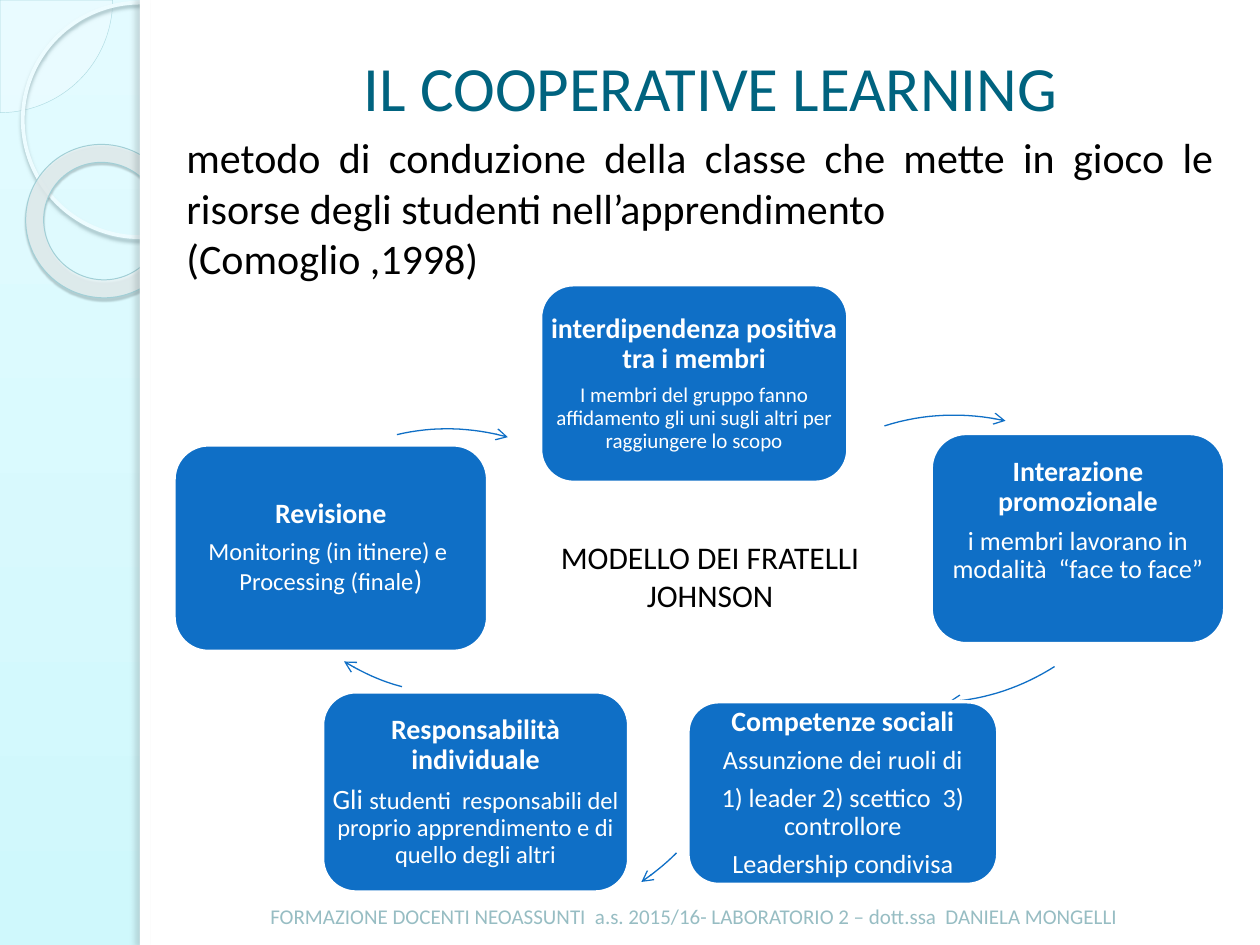
from lxml.etree import SubElement
from pptx import Presentation
from pptx.dml.color import RGBColor
from pptx.enum.shapes import MSO_SHAPE
from pptx.enum.text import MSO_ANCHOR, PP_ALIGN
from pptx.oxml.ns import qn
from pptx.util import Pt

WHITE = RGBColor(0xFF, 0xFF, 0xFF)
BLACK = RGBColor(0x00, 0x00, 0x00)
BLUE = RGBColor(0x0F, 0x6F, 0xC6)
TEAL = RGBColor(0x00, 0x63, 0x7F)
FOOTER_TEAL = RGBColor(0x97, 0xBD, 0xC3)
STRIP_TOP = RGBColor(0xE3, 0xFB, 0xFF)
STRIP_BOTTOM = RGBColor(0xCF, 0xF8, 0xFC)
PIE_FILL = RGBColor(0xF8, 0xFE, 0xFF)
PIE_LINE = RGBColor(0xAF, 0xDB, 0xE2)
CIRCLE_LINE = RGBColor(0xED, 0xFC, 0xFF)
DONUT_FILL = RGBColor(0xE8, 0xF1, 0xF2)
DONUT_LINE = RGBColor(0xA1, 0xCF, 0xD6)

presentation = Presentation()
presentation.slide_width, presentation.slide_height = Pt(720), Pt(540)
slide = presentation.slides.add_slide(presentation.slide_layouts[5])


def write_text(shape, paragraphs, color=BLACK, align=PP_ALIGN.CENTER,
               anchor=MSO_ANCHOR.MIDDLE, line_spacing=None, after=0, insets=None):
    """Each paragraph is a list of (text, size, bold) runs; after is a share of the size."""
    frame = shape.text_frame
    frame.word_wrap = True
    frame.vertical_anchor = anchor
    if insets:
        (frame.margin_left, frame.margin_top,
         frame.margin_right, frame.margin_bottom) = map(Pt, insets)
    for index, runs in enumerate(paragraphs):
        paragraph = frame.add_paragraph() if index else frame.paragraphs[0]
        paragraph.alignment = align
        paragraph.line_spacing = line_spacing
        paragraph.space_before = Pt(0)
        paragraph.space_after = Pt(after * runs[0][1])
        for text, size, bold in runs:
            run = paragraph.add_run()
            run.text = text
            run.font.name, run.font.size, run.font.bold = "Calibri", Pt(size), bold
            run.font.color.rgb = color


def draw_shape(kind, box, fill=None, alpha=100, line=None, width=1, shadow=None):
    """A shadow is (colour, alpha, blur, distance, angle)."""
    shape = slide.shapes.add_shape(kind, *map(Pt, box))
    shape.shadow.inherit = False
    if fill is None:
        shape.fill.background()
    else:
        shape.fill.solid()
        shape.fill.fore_color.rgb = fill
        color = shape._element.spPr.find(qn("a:solidFill"))[0]
        if alpha < 100:
            SubElement(color, qn("a:alpha"), val=str(alpha * 1000))
    if line is None:
        shape.line.fill.background()
    else:
        shape.line.color.rgb = line
        shape.line.width = Pt(width)
    if shadow:
        shade, opacity, blur, distance, angle = shadow
        effects = shape._element.spPr.find(qn("a:effectLst"))
        outer = SubElement(effects, qn("a:outerShdw"), blurRad=str(Pt(blur)),
                           dist=str(Pt(distance)), dir=str(angle * 60000),
                           algn="tl", rotWithShape="0")
        color = SubElement(outer, qn("a:srgbClr"), val=shade)
        SubElement(color, qn("a:alpha"), val=str(opacity * 1000))
    return shape


# Background and ornaments of the left strip
background = slide.background.fill
background.gradient()
background.gradient_angle = 270
for stop, color in zip(background.gradient_stops, (STRIP_TOP, STRIP_BOTTOM)):
    stop.color.rgb = color

pie = draw_shape(MSO_SHAPE.PIE, (-64.3, -64.3, 128.7, 128.7), fill=PIE_FILL, alpha=33,
                 line=PIE_LINE, width=0.25)
pie.adjustments[0], pie.adjustments[1] = 0, 54
draw_shape(MSO_SHAPE.OVAL, (13, 1.5, 134, 134), line=CIRCLE_LINE, width=2.15,
           shadow=("9CB9BE", 85, 2, 2, 90))
donut = draw_shape(MSO_SHAPE.DONUT, (14.4, 82.8, 88.6, 87.1), fill=DONUT_FILL, alpha=80,
                   line=DONUT_LINE, width=0.58, shadow=("4B5E61", 35, 1, 1.2, 75))
donut.adjustments[0] = 0.118
donut.rotation = 38.6

# White panel with a shaded left edge
draw_shape(MSO_SHAPE.RECTANGLE, (80, 0, 640, 540), fill=WHITE)
draw_shape(MSO_SHAPE.RECTANGLE, (80, 0, 5.8, 540), fill=WHITE,
           shadow=("6C7A7C", 25, 3, 3, 180))

# Footer, definition, title and centre label
footer = slide.shapes.add_textbox(Pt(87.8), Pt(496.8), Pt(617.8), Pt(37.4))
write_text(footer, [[("FORMAZIONE DOCENTI NEOASSUNTI  a.s. 2015/16- LABORATORIO 2 – "
                      "dott.ssa  DANIELA MONGELLI", 12, False)]],
           color=FOOTER_TEAL, anchor=MSO_ANCHOR.BOTTOM)

definition = slide.shapes.add_textbox(Pt(99.4), Pt(71.3), Pt(601.2), Pt(94.3))
write_text(definition, [
    [("metodo di conduzione della classe che mette in gioco le risorse degli studenti "
      "nell’apprendimento", 24, False)],
    [("(Comoglio ,1998)", 24, False)],
], align=PP_ALIGN.JUSTIFY)

title = slide.shapes.title
title.left, title.top, title.width, title.height = Pt(110.9), Pt(15.1), Pt(590.4), Pt(68.4)
write_text(title, [[("IL COOPERATIVE LEARNING", 36, False)]], color=TEAL)
slide.shapes._spTree.append(title._element)  # in front of the white panel

label = slide.shapes.add_textbox(Pt(286.6), Pt(303.8), Pt(238.3), Pt(51.1))
write_text(label, [[("MODELLO DEI FRATELLI JOHNSON", 18, False)]], anchor=MSO_ANCHOR.TOP)

# Cycle: box, bottom inset, heading, details, then the Bezier points of the next arrow
steps = [
    ((308.9, 162.7, 175.7, 113), 0, "interdipendenza positiva tra i membri",
     [[("I membri del gruppo fanno affidamento gli uni sugli altri per raggiungere lo scopo",
        12, False)]],
     [(505.4, 243.4), (527.8, 236.2), (551.5, 235.4), (574.6, 240.5)]),
    ((532.1, 247.7, 167.8, 120.2), 20, "Interazione promozionale",
     [[("i membri lavorano in modalità  “face to face”", 15, False)]],
     [(602.6, 380.9), (584.6, 392.4), (563.8, 399.6), (542.2, 401)]),
    ((393.1, 401, 177.1, 104.4), 0, "Competenze sociali",
     [[("Assunzione dei ruoli di", 15, False)],
      [("1) leader 2) scettico  3) controllore", 15, False)],
      [("Leadership condivisa", 15, False)]],
     [(386.6, 487.4), (380.9, 493.2), (373.7, 499), (366.5, 504)]),
    ((184.3, 395.3, 175, 114.5), 0, "Responsabilità individuale",
     [[("Gli ", 16, False),
       ("studenti  responsabili del proprio apprendimento e di quello degli altri",
        14, False)]],
     [(229.7, 392.4), (218.2, 389.5), (207.4, 384.5), (196.6, 378)]),
    ((99.4, 254.2, 179.3, 118.1), 0, "Revisione",
     [[("Monitoring (in itinere) e  Processing (finale", 14, False), (")", 16, False)]],
     [(226.8, 248.4), (247.7, 243.4), (269.3, 244.1), (290.2, 249.8)]),
]
SEGMENTS = 16
for box, bottom, heading, details, curve in steps:
    step = draw_shape(MSO_SHAPE.ROUNDED_RECTANGLE, box, fill=BLUE, line=WHITE, width=2)
    write_text(step, [[(heading, 16, True)], *details], color=WHITE,
               line_spacing=0.9, after=0.35, insets=(0, 0, 0, bottom))

    points = []
    for index in range(SEGMENTS + 1):
        t = index / SEGMENTS
        weights = ((1 - t) ** 3, 3 * t * (1 - t) ** 2, 3 * t ** 2 * (1 - t), t ** 3)
        points.append(tuple(Pt(sum(w * p[axis] for w, p in zip(weights, curve)))
                            for axis in (0, 1)))
    builder = slide.shapes.build_freeform(*points[0])
    builder.add_line_segments(points[1:], close=False)
    arrow = builder.convert_to_shape()
    arrow.shadow.inherit = False
    arrow.fill.background()
    arrow.line.color.rgb = BLUE
    arrow.line.width = Pt(0.75)
    SubElement(arrow.line._get_or_add_ln(), qn("a:tailEnd"), type="arrow")

presentation.save("out.pptx")
